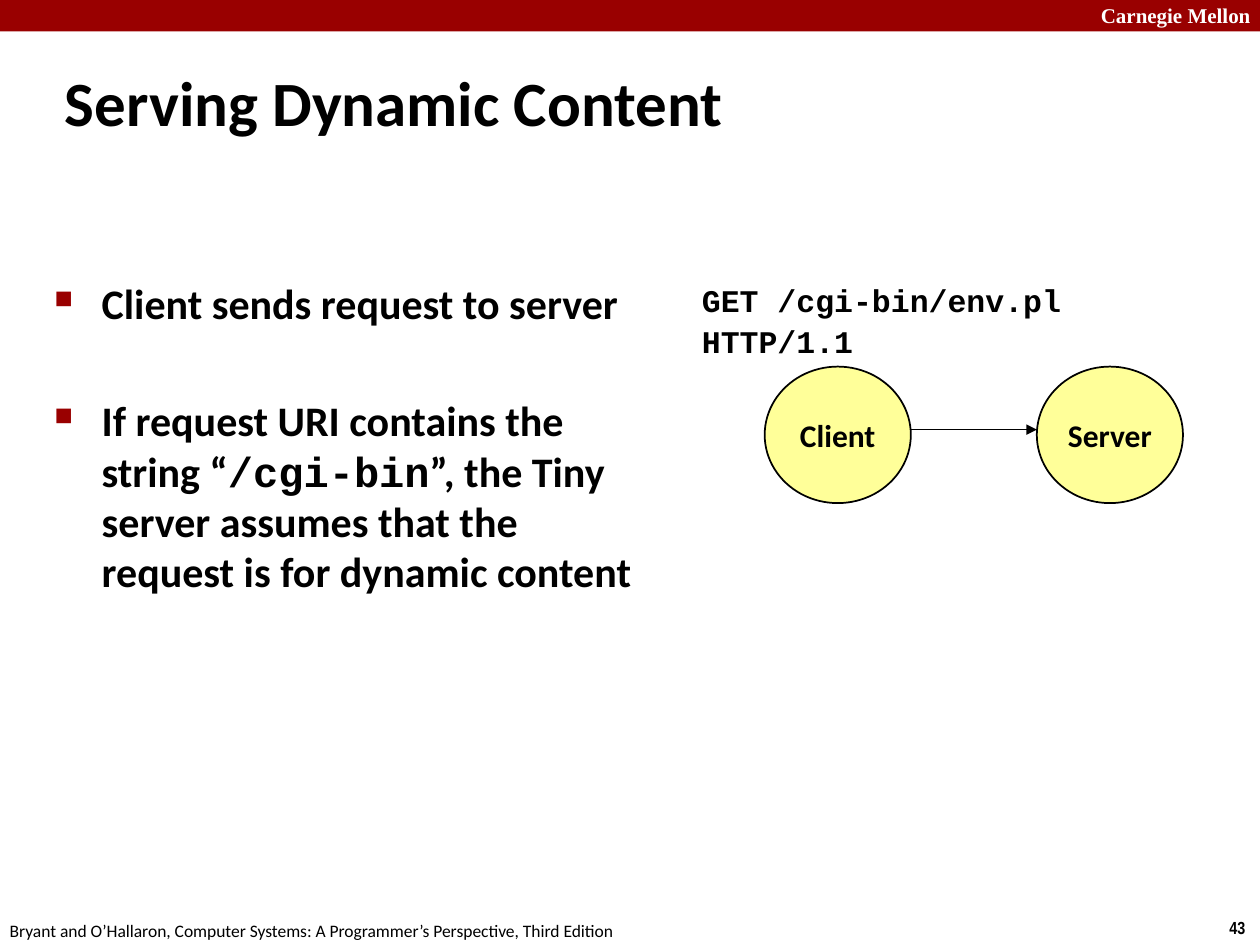
from lxml import etree
from pptx import Presentation
from pptx.enum import shapes, text
from pptx.oxml import ns
from pptx.dml.color import RGBColor
from pptx.util import Pt

COLORS = {"red": "990000", "white": "FFFFFF", "black": "000000", "yellow": "FFFF99"}

# text, (left, top, width, height), format
LABELS = [
    ("Carnegie Mellon", (622, -2, 103, 21.6),
     dict(size=12, font="Times New Roman", bold=True, color="white")),
    ("43", (695.5, 520.5, 24.5, 19.5),
     dict(size=10, font="Arial Narrow", bold=True, wrap=False)),
    ("Bryant and O’Hallaron, Computer Systems: A Programmer’s Perspective, Third Edition",
     (-1.5, 522, 366, 19.5), dict(size=10, wrap=False)),
    ("Serving Dynamic Content", (30, 33, 480, 45), dict(size=36, bold=True)),
    ("GET /cgi-bin/env.pl HTTP/1.1", (394, 168, 315, 28.8),
     dict(size=18, font="Courier New", bold=True, spacing=1.07,
          anchor=text.MSO_ANCHOR.MIDDLE)),
]
# each bullet is a list of (text, font)
BULLETS = [
    [("Client sends request to server", "Calibri")],
    [("If request URI contains the string “", "Calibri"),
     ("/cgi-bin", "Courier New"),
     ("”, the Tiny server assumes that the request is for dynamic content", "Calibri")],
]
BULLETS_BOX = (24, 155, 348, 350)
BULLET_INDENT, BULLET_GAP = 27, 38.2

NODES = ["Client", "Server"]
NODE_LEFT, NODE_TOP, NODE_WIDTH, NODE_HEIGHT, NODE_GAP = 437, 209.5, 83.5, 78, 72
ARROW_Y = 245.5


def rgb(name):
    return RGBColor.from_string(COLORS[name])


def write(paragraph, words, size=18, font="Calibri", bold=False, color="black"):
    run = paragraph.add_run()
    run.text = words
    run.font.name, run.font.size, run.font.bold = font, Pt(size), bold
    run.font.color.rgb = rgb(color)


def add_label(slide, words, box, wrap=True, anchor=text.MSO_ANCHOR.TOP, spacing=None, **style):
    frame = slide.shapes.add_textbox(*map(Pt, box)).text_frame
    frame.word_wrap, frame.vertical_anchor = wrap, anchor
    frame.paragraphs[0].line_spacing = spacing
    write(frame.paragraphs[0], words, **style)


def add_solid(slide, kind, box, fill, line=None):
    shape = slide.shapes.add_shape(kind, *map(Pt, box))
    shape.shadow.inherit = False
    shape.fill.solid()
    shape.fill.fore_color.rgb = rgb(fill)
    if line:
        shape.line.color.rgb, shape.line.width = rgb(line), Pt(1)
    else:
        shape.line.fill.background()
    return shape


def add_bullets(slide):
    frame = slide.shapes.add_textbox(*map(Pt, BULLETS_BOX)).text_frame
    frame.word_wrap = True
    for i, runs in enumerate(BULLETS):
        paragraph = frame.add_paragraph() if i else frame.paragraphs[0]
        if i:
            paragraph.space_before = Pt(BULLET_GAP)
        props = paragraph._p.get_or_add_pPr()
        props.set("marL", str(Pt(BULLET_INDENT)))
        props.set("indent", str(-Pt(BULLET_INDENT)))
        color = etree.SubElement(props, ns.qn("a:buClr"))
        etree.SubElement(color, ns.qn("a:srgbClr"), val=COLORS["red"])
        etree.SubElement(props, ns.qn("a:buSzPct"), val="60000")
        etree.SubElement(props, ns.qn("a:buChar"), char="■")
        for words, font in runs:
            write(paragraph, words, size=24, font=font, bold=True)


def add_node(slide, name, left):
    node = add_solid(slide, shapes.MSO_SHAPE.OVAL,
                     (left, NODE_TOP, NODE_WIDTH, NODE_HEIGHT), "yellow", "black")
    frame = node.text_frame
    frame.word_wrap, frame.vertical_anchor = False, text.MSO_ANCHOR.MIDDLE
    frame.paragraphs[0].alignment = text.PP_ALIGN.CENTER
    write(frame.paragraphs[0], name, bold=True)


def add_arrow(slide, start, end, y):
    arrow = slide.shapes.add_connector(
        shapes.MSO_CONNECTOR.STRAIGHT, Pt(start), Pt(y), Pt(end), Pt(y))
    arrow.line.color.rgb, arrow.line.width = rgb("black"), Pt(1)
    etree.SubElement(arrow.line._get_or_add_ln(), ns.qn("a:tailEnd"), type="triangle")
    etree.SubElement(arrow._element.spPr, ns.qn("a:effectLst"))


def main():
    deck = Presentation()
    deck.slide_width, deck.slide_height = Pt(720), Pt(540)
    slide = deck.slides.add_slide(deck.slide_layouts[6])
    add_solid(slide, shapes.MSO_SHAPE.RECTANGLE, (0, 0, 720, 18), "red")
    for words, box, style in LABELS:
        add_label(slide, words, box, **style)
    add_bullets(slide)
    for i, name in enumerate(NODES):
        add_node(slide, name, NODE_LEFT + i * (NODE_WIDTH + NODE_GAP))
    client_right = NODE_LEFT + NODE_WIDTH
    add_arrow(slide, client_right, client_right + NODE_GAP, ARROW_Y)
    deck.save("out.pptx")


if __name__ == "__main__":
    main()
